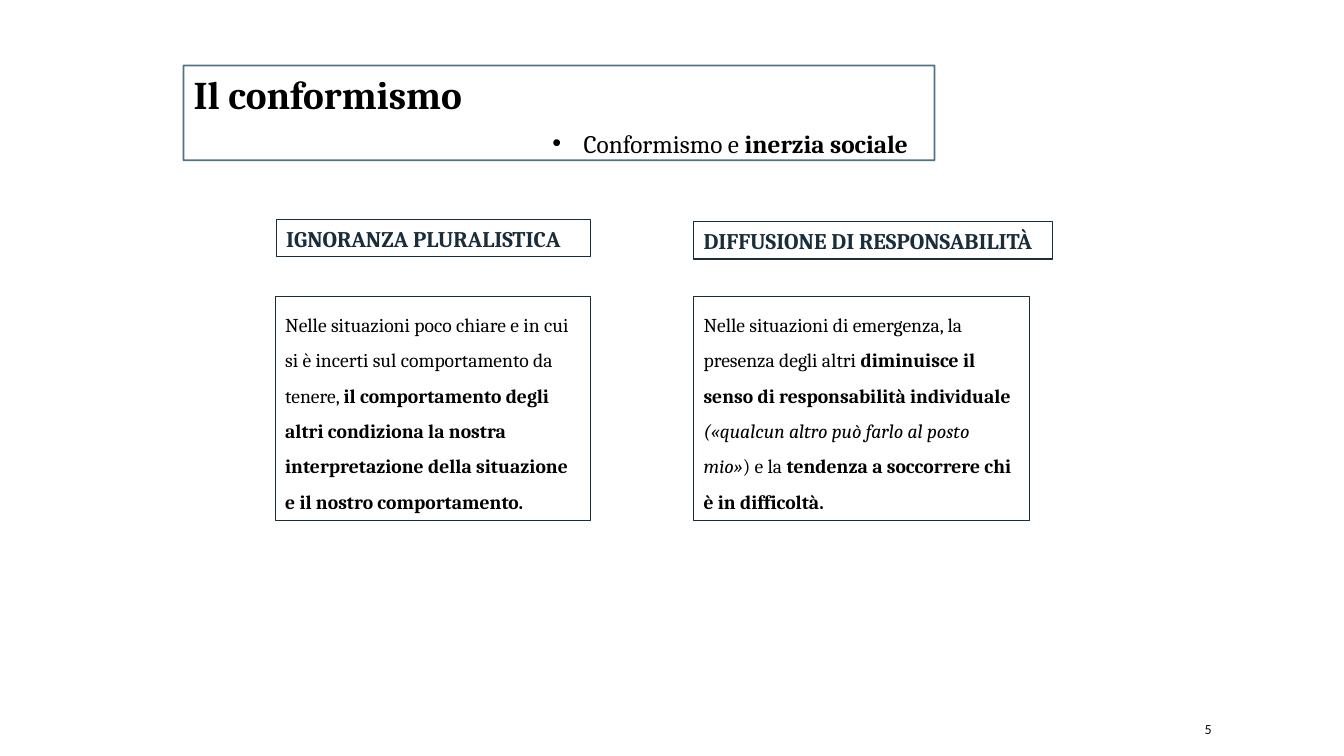
from pptx import Presentation
from pptx.dml.color import RGBColor
from pptx.enum.shapes import MSO_SHAPE
from pptx.enum.text import MSO_ANCHOR, MSO_AUTO_SIZE, PP_ALIGN
from pptx.oxml.ns import qn
from pptx.util import Inches, Pt
from lxml import etree

RECTANGLE = MSO_SHAPE.RECTANGLE
TOP, MIDDLE = MSO_ANCHOR.TOP, MSO_ANCHOR.MIDDLE
NO_FIT, GROW = MSO_AUTO_SIZE.NONE, MSO_AUTO_SIZE.SHAPE_TO_FIT_TEXT
LEFT = PP_ALIGN.LEFT

BLACK = RGBColor(0x00, 0x00, 0x00)
WHITE = RGBColor(0xFF, 0xFF, 0xFF)
DARK_GRAY = RGBColor(0x0D, 0x0D, 0x0D)
NAVY = RGBColor(0x1A, 0x2D, 0x3A)
STEEL = RGBColor(0x33, 0x5B, 0x74)

# Run styles
PLAIN, BOLD, ITALIC = "plain", "bold", "italic"


def write_text(shape, runs, size, color=BLACK, font="Cambria", spacing=1.0):
    """Write one left-aligned paragraph made of (text, style) runs."""
    paragraph = shape.text_frame.paragraphs[0]
    paragraph.alignment = LEFT
    paragraph.line_spacing = spacing
    paragraph.space_before = Pt(0)
    paragraph.font.size = Pt(size)
    paragraph.font.name = font
    paragraph.font.color.rgb = color
    for text, style in runs:
        run = paragraph.add_run()
        run.text = text
        run.font.bold = style == BOLD
        run.font.italic = style == ITALIC
    return paragraph


def add_bullet(paragraph, indent):
    properties = paragraph._p.get_or_add_pPr()
    properties.set("marL", str(indent))
    properties.set("indent", str(-indent))
    font = etree.SubElement(properties, qn("a:buFont"))
    font.set("typeface", "Arial")
    bullet = etree.SubElement(properties, qn("a:buChar"))
    bullet.set("char", "•")
    # Bullet settings come before the default run properties
    defaults = properties.find(qn("a:defRPr"))
    if defaults is not None:
        properties.append(defaults)


def add_header(slide, left, top, width, height):
    # Framed title
    title = slide.shapes.title
    title.left, title.top = Inches(left), Inches(top)
    title.width, title.height = Inches(width), Inches(height)
    title.line.color.rgb = STEEL
    title.line.width = Pt(1.25)
    line_color = title.line._ln.find(".//" + qn("a:srgbClr"))
    etree.SubElement(line_color, qn("a:alpha")).set("val", "86000")
    title.text_frame.auto_size = NO_FIT
    title.text_frame.vertical_anchor = TOP
    write_text(title, [("Il conformismo", BOLD)], 28)

    # Bulleted subtitle at the right end of the frame
    subtitle_width = 3.89
    subtitle = slide.shapes.add_textbox(
        Inches(left + width - subtitle_width), Inches(top + 0.42),
        Inches(subtitle_width), Inches(0.56))
    subtitle.text_frame.word_wrap = False
    subtitle.text_frame.auto_size = GROW
    runs = [("Conformismo e ", PLAIN), ("inerzia sociale", BOLD)]
    add_bullet(write_text(subtitle, runs, 18, spacing=1.5), Inches(0.31))


def add_framed_box(slide, box, line_width):
    shape = slide.shapes.add_shape(RECTANGLE, *map(Inches, box))
    shape.shadow.inherit = False
    shape.line.color.rgb = NAVY
    shape.line.width = Pt(line_width)
    shape.text_frame.word_wrap = True
    shape.text_frame.auto_size = GROW
    shape.text_frame.vertical_anchor = TOP
    return shape


def add_concept(slide, heading_box, heading, body_box, body_runs):
    body = add_framed_box(slide, body_box, 0.25)
    body.fill.background()
    write_text(body, body_runs, 14, spacing=1.5)

    label = add_framed_box(slide, heading_box, 0.75)
    label.fill.solid()
    label.fill.fore_color.rgb = WHITE
    write_text(label, [(heading, BOLD)], 16, NAVY)


def add_page_number(slide, left, top, width, height):
    number = slide.shapes.add_textbox(*map(Inches, (left, top, width, height)))
    number.text_frame.word_wrap = True
    number.text_frame.vertical_anchor = MIDDLE
    write_text(number, [("5", PLAIN)], 10, DARK_GRAY, "Calibri")


def main():
    presentation = Presentation()
    presentation.slide_width = Inches(13.33)
    presentation.slide_height = Inches(7.5)
    slide = presentation.slides.add_slide(presentation.slide_layouts[5])

    add_header(slide, 1.82, 0.65, 7.45, 0.94)

    # Left concept
    add_concept(
        slide, (2.74, 2.18, 3.12, 0.37), "IGNORANZA PLURALISTICA",
        (2.73, 2.94, 3.12, 2.22),
        [("Nelle situazioni poco chiare e in cui si è incerti sul "
          "comportamento da tenere, ", PLAIN),
         ("il comportamento degli altri condiziona la nostra interpretazione "
          "della situazione e il nostro comportamento.", BOLD)])

    # Right concept
    add_concept(
        slide, (6.88, 2.2, 3.56, 0.37), "DIFFUSIONE DI RESPONSABILITÀ",
        (6.88, 2.94, 3.33, 2.22),
        [("Nelle situazioni di emergenza, la presenza degli altri ", PLAIN),
         ("diminuisce il senso di responsabilità individuale ", BOLD),
         ("(«qualcun altro può farlo al posto mio»", ITALIC),
         (") e la ", PLAIN),
         ("tendenza a soccorrere chi è in difficoltà.", BOLD)])

    add_page_number(slide, 11.85, 7.08, 1.06, 0.3)
    presentation.save("out.pptx")


if __name__ == "__main__":
    main()
